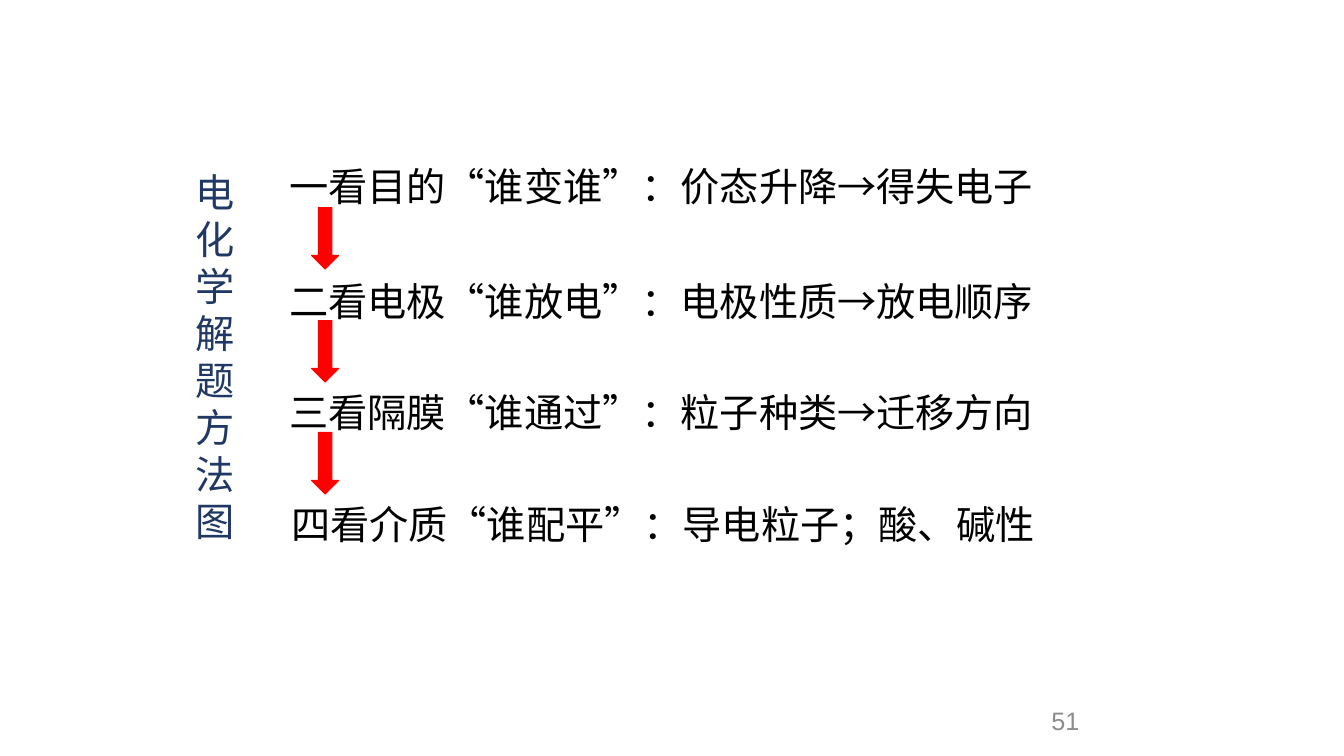
import pptx
import pptx.util
import pptx.dml.color
import pptx.enum.shapes
import pptx.enum.text
import pptx.oxml
import pptx.oxml.ns

PX = 9144  # EMU in one px, 100 px to the inch
NAVY = pptx.dml.color.RGBColor(0x20, 0x38, 0x64)
BLACK = pptx.dml.color.RGBColor(0, 0, 0)
RED = pptx.dml.color.RGBColor(0xFF, 0, 0)
GREY = pptx.dml.color.RGBColor(0x8C, 0x8C, 0x8C)
SERIF, CJK, SANS = "Times New Roman", "Noto Sans CJK SC", "Arial"
ALIGN = pptx.enum.text.PP_ALIGN

TITLE = ["电", "化", "学", "解题方法图"]
STEPS = [
    (277, 153, 780, [("一看目的“谁变谁”：价态升降", SERIF), ("→", CJK), ("得失电子", SERIF)]),
    (277, 267, 772, [("二看电极“谁放电”：电极性质", SERIF), ("→", CJK), ("放电顺序", SERIF)]),
    (277, 377, 772, [("三看隔膜“谁通过”：粒子种类", SERIF), ("→", CJK), ("迁移方向", SERIF)]),
    (279, 488, 772, [("四看介质“谁配平”：导电粒子", SERIF), ("；酸、碱性", CJK)]),
]
ARROW_TOPS = [223, 335, 446]


def place(shape, left, top, width, height):
    values = {"left": left, "top": top, "width": width, "height": height}
    for name, value in values.items():
        setattr(shape, name, value * PX)


def write(box, paragraphs, size, color, align=ALIGN.LEFT, pitch=None, top_inset=5):
    """Fill a box; each paragraph is a list of (text, font) pairs."""
    frame = box.text_frame
    layout = {"word_wrap": True, "auto_size": pptx.enum.text.MSO_AUTO_SIZE.NONE,
              "vertical_anchor": pptx.enum.text.MSO_ANCHOR.TOP,
              "margin_left": 10 * PX, "margin_right": 10 * PX,
              "margin_top": top_inset * PX, "margin_bottom": 0}
    for name, value in layout.items():
        setattr(frame, name, value)
    for index, spans in enumerate(paragraphs):
        para = frame.add_paragraph() if index else frame.paragraphs[0]
        para.alignment = align
        if pitch:
            para.line_spacing = pptx.util.Pt(pitch)
        for text, font in spans:
            span = para.add_run()
            span.text = text
            for name, value in {"name": font, "size": pptx.util.Pt(size)}.items():
                setattr(span.font, name, value)
            span.font.color.rgb = color
            # East Asian typeface follows the Latin one
            east = pptx.oxml.parse_xml(
                f'<a:ea {pptx.oxml.ns.nsdecls("a")} typeface="{CJK}"/>')
            span.font._element.find(pptx.oxml.ns.qn("a:latin")).addnext(east)


def add_text(page, bounds, spans, size, color, **options):
    box = page.shapes.add_textbox(0, 0, PX, PX)
    place(box, *bounds)
    write(box, [spans], size, color, **options)


def add_down_arrow(page, top):
    arrow = page.shapes.add_shape(
        pptx.enum.shapes.MSO_SHAPE.RIGHT_ARROW, 0, 0, PX, PX)
    place(arrow, 292, top, 61, 27)
    arrow.rotation = 90
    arrow.shadow.inherit = False
    arrow.fill.solid()
    arrow.fill.fore_color.rgb = RED
    arrow.line.color.rgb = RED
    arrow.line.width = pptx.util.Pt(0.75)


def main():
    deck = pptx.Presentation()
    deck.slide_width, deck.slide_height = 1333 * PX, 750 * PX
    page = deck.slides.add_slide(deck.slide_layouts[5])

    # Title, one character to a line
    title = page.shapes.title
    place(title, 182, 159, 63, 387)
    write(title, [[(text, SERIF)] for text in TITLE], 28, NAVY,
          align=ALIGN.CENTER, pitch=33.6, top_inset=8)

    # Four steps
    for left, top, width, spans in STEPS:
        add_text(page, (left, top, width, 57), spans, 28, BLACK,
                 pitch=33.6, top_inset=8)

    # Arrows between the steps
    for top in ARROW_TOPS:
        add_down_arrow(page, top)

    # Page number
    add_text(page, (1033, 695, 300, 40), [("51", SANS)], 18, GREY)

    deck.save("out.pptx")


if __name__ == "__main__":
    main()
